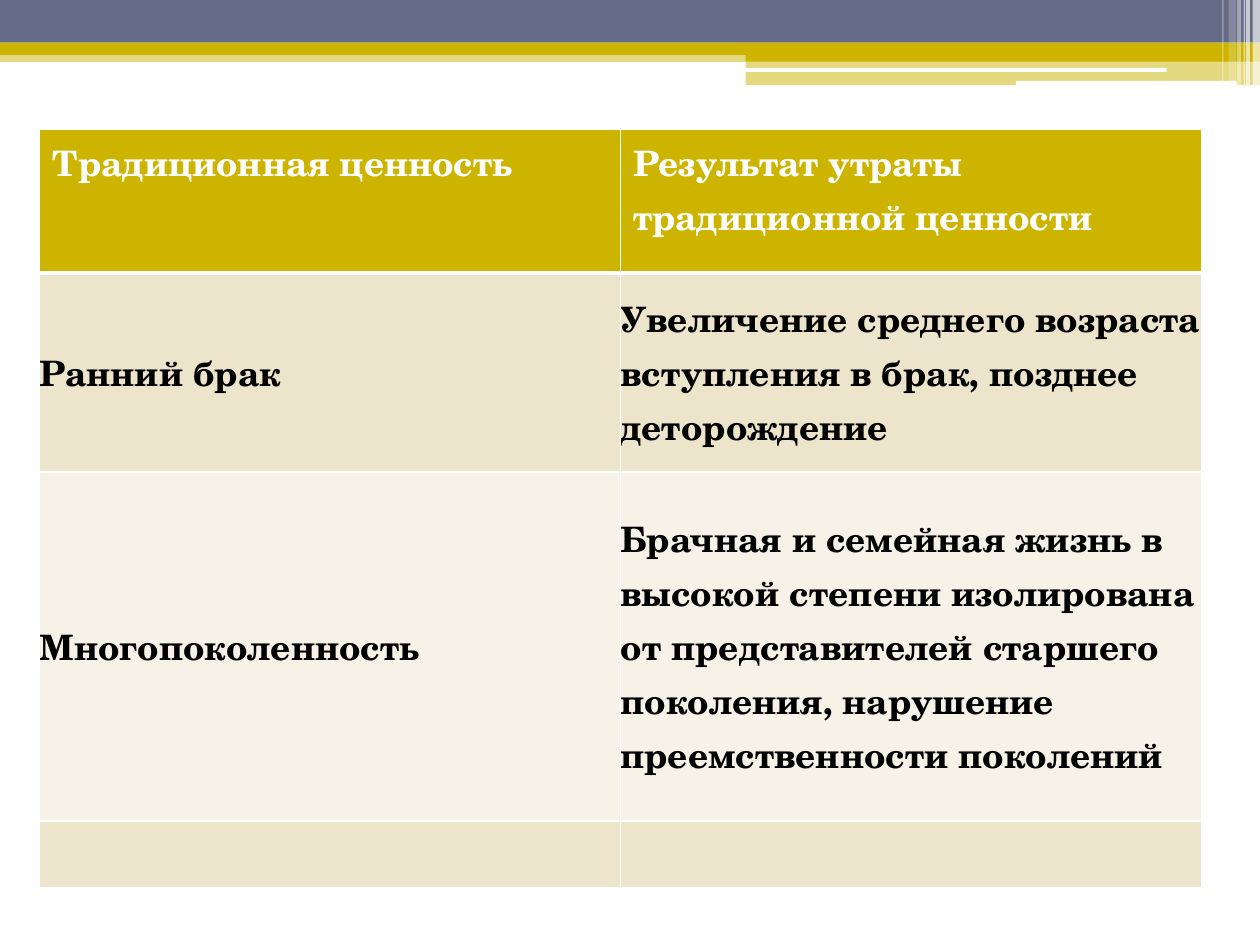
import dataclasses
import lxml.etree
import pptx
import pptx.dml.color
import pptx.enum.shapes
import pptx.enum.text
import pptx.oxml.ns
import pptx.util

Cm = pptx.util.Cm
Pt = pptx.util.Pt
qn = pptx.oxml.ns.qn
Kind = pptx.enum.shapes.MSO_SHAPE
Anchor = pptx.enum.text.MSO_ANCHOR

GOLD, SLATE, WHITE = "CCB400", "646B86", "FFFFFF"
SAND, CREAM, BLACK = "ECE5CC", "F6F2E7", "000000"
FONT = "TeX Gyre Schola"


@dataclasses.dataclass
class Bar:
    """A strip of the top band, in centimetres."""
    left: float
    top: float
    width: float
    height: float
    color: str
    alpha: int = 100
    kind: int = Kind.RECTANGLE


@dataclasses.dataclass
class Row:
    """A table row, with its height in centimetres."""
    height: float
    fill: str
    texts: tuple[str, str] = ("", "")
    head: bool = False


ROUND = Kind.ROUNDED_RECTANGLE
BARS = [
    Bar(0, 1.02, 25.4, 0.23, GOLD, 50),
    Bar(0, 0, 25.4, 0.86, SLATE),
    Bar(0, 0.86, 25.4, 0.25, GOLD),
    Bar(15.03, 0.99, 10.37, 0.25, GOLD),
    Bar(15.03, 1.22, 10.37, 0.5, GOLD, 50),
    Bar(15.01, 1.37, 8.51, 0.08, WHITE, 100, ROUND),
    Bar(20.48, 1.63, 4.45, 0.1, WHITE, 100, ROUND),
    Bar(25.25, 0, 0.15, 1.72, WHITE, 65),
    Bar(25.12, 0, 0.08, 1.72, WHITE, 65),
    Bar(25.07, 0, 0.03, 1.72, WHITE, 60),
    Bar(24.94, 0, 0.08, 1.72, WHITE, 40),
    Bar(24.77, 0, 0.15, 1.63, WHITE, 20),
    Bar(24.64, 0, 0.03, 1.63, WHITE, 30),
]
ROWS = [
    Row(2.9, GOLD, ("Традиционная ценность",
                    "Результат утраты традиционной ценности"), True),
    Row(4.01, SAND, ("Ранний брак",
                     "Увеличение среднего возраста вступления в брак, "
                     "позднее деторождение")),
    Row(7.04, CREAM, ("Многопоколенность",
                      "Брачная и семейная жизнь в высокой степени изолирована "
                      "от представителей старшего поколения, нарушение "
                      "преемственности поколений")),
    Row(1.35, SAND),
]
PLAIN = {"margin_left": 0, "margin_right": 0, "margin_top": 0,
         "margin_bottom": 0, "vertical_anchor": Anchor.MIDDLE}


def paint(fill, color: str) -> None:
    """Fill with one solid colour."""
    fill.solid()
    fill.fore_color.rgb = pptx.dml.color.RGBColor.from_string(color)


def apply(item, style: dict) -> None:
    """Set each attribute named in the style."""
    for name, value in style.items():
        setattr(item, name, value)


def draw_bar(slide, bar: Bar) -> None:
    """Draw one strip of the top band."""
    box = [Cm(n) for n in (bar.left, bar.top, bar.width, bar.height)]
    shape = slide.shapes.add_shape(bar.kind, *box)
    shape.shadow.inherit = False
    shape.line.fill.background()
    paint(shape.fill, bar.color)
    if bar.alpha < 100:
        tint = shape.fill._xPr.find(".//" + qn("a:srgbClr"))
        lxml.etree.SubElement(tint, qn("a:alpha"), val=str(bar.alpha * 1000))


def edge(cell, side: str, width: int) -> None:
    """Give one side of a cell a white line."""
    props = cell._tc.get_or_add_tcPr()
    line = lxml.etree.Element(qn("a:ln" + side), w=str(Pt(width)))
    solid = lxml.etree.SubElement(line, qn("a:solidFill"))
    lxml.etree.SubElement(solid, qn("a:srgbClr"), val=WHITE)
    props.insert("LRTB".index(side), line)


def draw_cell(cell, row: Row, text: str, below: bool) -> None:
    """Fill, frame and write one cell."""
    paint(cell.fill, row.fill)
    for side in "LRTB":
        thick = side == "B" and row.head or side == "T" and below
        edge(cell, side, 3 if thick else 1)
    if not text:
        return
    if not row.head:
        apply(cell, PLAIN)
    run = cell.text_frame.paragraphs[0].add_run()
    run.text = text
    apply(run.font, {"name": FONT, "size": Pt(20), "bold": True})
    paint(run.font.fill, WHITE if row.head else BLACK)


def draw_table(slide, rows: list[Row]) -> None:
    """Draw the table of values and their loss."""
    high = sum(row.height for row in rows)
    frame = slide.shapes.add_table(
        len(rows), 2, Cm(0.8), Cm(2.6), Cm(23.42), Cm(high))
    table = frame.table
    for i, row in enumerate(rows):
        table.rows[i].height = Cm(row.height)
        for j, text in enumerate(row.texts):
            draw_cell(table.cell(i, j), row, text, i == 1)


def main() -> None:
    """Build the slide and save it."""
    deck = pptx.Presentation()
    apply(deck, {"slide_width": Cm(25.4), "slide_height": Cm(19.05)})
    slide = deck.slides.add_slide(deck.slide_layouts[6])
    for bar in BARS:
        draw_bar(slide, bar)
    draw_table(slide, ROWS)
    deck.save("out.pptx")


if __name__ == "__main__":
    main()
